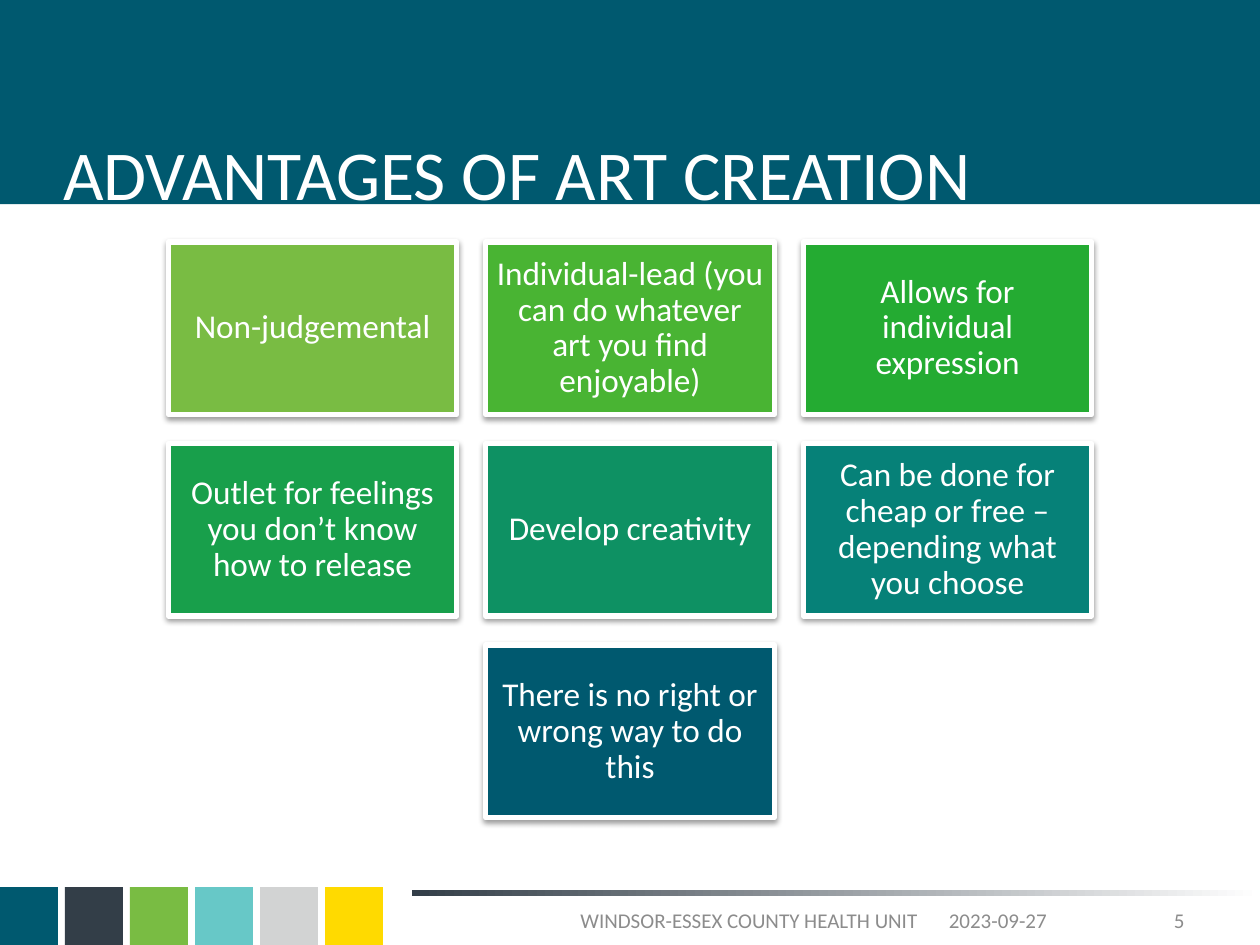
import dataclasses

import lxml.etree
import pptx
import pptx.dml.color
import pptx.enum.shapes
import pptx.enum.text
import pptx.oxml
import pptx.oxml.ns
import pptx.util

Inches = pptx.util.Inches
ALIGN = pptx.enum.text.PP_ALIGN
ANCHOR = pptx.enum.text.MSO_ANCHOR


@dataclasses.dataclass(frozen=True)
class Theme:
    font: str = "Calibri"
    title_size: int = 40
    card_size: int = 19
    footer_size: int = 12
    teal: str = "00596F"
    slate: str = "333E48"
    white: str = "FFFFFF"
    gray: str = "8C8C8C"
    swatches: tuple = ("00596F", "333E48", "79BC43", "67C8C7", "D2D3D3", "FFDA00")


SHADOW = (
    f'<a:effectLst {pptx.oxml.ns.nsdecls("a")}>'
    '<a:outerShdw blurRad="40000" dist="20000" dir="5400000" rotWithShape="0">'
    '<a:srgbClr val="000000"><a:alpha val="38000"/></a:srgbClr>'
    "</a:outerShdw></a:effectLst>"
)


def rgb(color):
    return pptx.dml.color.RGBColor.from_string(color)


class SlideBuilder:
    """Holds the theme and the current slide."""

    def __init__(self, slide, theme):
        self.slide = slide
        self.theme = theme

    def format_text(self, text_frame, size, color, align, anchor, inset=None):
        text_frame.word_wrap = True
        text_frame.auto_size = pptx.enum.text.MSO_AUTO_SIZE.NONE
        text_frame.vertical_anchor = anchor
        if inset is not None:
            text_frame.margin_left = text_frame.margin_right = Inches(inset)
            text_frame.margin_top = text_frame.margin_bottom = Inches(inset)
        for paragraph in text_frame.paragraphs:
            paragraph.alignment = align
            for run in paragraph.runs:
                run.font.name = self.theme.font
                run.font.size = pptx.util.Pt(size)
                run.font.color.rgb = rgb(color)

    def rectangle(self, left, top, width, height, color):
        shape = self.slide.shapes.add_shape(
            pptx.enum.shapes.MSO_SHAPE.RECTANGLE,
            Inches(left), Inches(top), Inches(width), Inches(height))
        shape.shadow.inherit = False
        shape.fill.solid()
        shape.fill.fore_color.rgb = rgb(color)
        shape.line.fill.background()
        return shape

    def fading_bar(self, left, top, width, height, start, end):
        fill = self.rectangle(left, top, width, height, start).fill
        fill.gradient()
        fill.gradient_angle = 0
        for stop, position, color in zip(fill.gradient_stops, (0, 1), (start, end)):
            stop.position = position
            stop.color.rgb = rgb(color)

    def title(self, text, left, top, width, height):
        title = self.slide.shapes.title
        title.left, title.top = Inches(left), Inches(top)
        title.width, title.height = Inches(width), Inches(height)
        title.text_frame.text = text
        self.format_text(title.text_frame, self.theme.title_size, self.theme.white,
                         ALIGN.LEFT, ANCHOR.BOTTOM, inset=0)
        # Bring the title in front of the banner
        title.element.getparent().append(title.element)

    def card(self, text, left, top, width, height, color):
        shape = self.rectangle(left, top, width, height, color)
        shape.line.color.rgb = rgb(self.theme.white)
        shape.line.width = pptx.util.Pt(3)
        properties = shape.element.spPr
        properties.remove(properties.find(pptx.oxml.ns.qn("a:effectLst")))
        properties.append(pptx.oxml.parse_xml(SHADOW))
        shape.text_frame.text = text
        self.format_text(shape.text_frame, self.theme.card_size, self.theme.white,
                         ALIGN.CENTER, ANCHOR.MIDDLE, inset=0.08)
        shape.text_frame.paragraphs[0].line_spacing = 0.9

    def footer(self, text, left, width, align):
        box = self.slide.shapes.add_textbox(
            Inches(left), Inches(7.1), Inches(width), Inches(0.4))
        box.text_frame.text = text
        self.format_text(box.text_frame, self.theme.footer_size, self.theme.gray,
                         align, ANCHOR.MIDDLE)


CARDS = (
    ("Non-judgemental", "79BC43"),
    ("Individual-lead (you can do whatever art you find enjoyable)", "49B433"),
    ("Allows for individual expression", "24AB32"),
    ("Outlet for feelings you don’t know how to release", "189F4B"),
    ("Develop creativity", "0E9163"),
    ("Can be done for cheap or free – depending what you choose", "068178"),
    ("There is no right or wrong way to do this", "00596F"),
)


def main():
    presentation = pptx.Presentation()
    presentation.slide_width = Inches(10)
    presentation.slide_height = Inches(7.5)
    theme = Theme()
    slide = presentation.slides.add_slide(presentation.slide_layouts[5])
    builder = SlideBuilder(slide, theme)

    # Banner and title
    builder.rectangle(0, 0, 10, 1.62, theme.teal)
    builder.title("ADVANTAGES OF ART CREATION", 0.5, 0.3, 9, 1.4)

    # Colour swatches and fading rule along the bottom
    swatch_size, swatch_pitch = 0.46, 2.58 / 5
    for index, color in enumerate(theme.swatches):
        builder.rectangle(index * swatch_pitch, 7.04, swatch_size, swatch_size, color)
    builder.fading_bar(3.27, 7.06, 6.73, 0.05, theme.slate, theme.white)

    # Footer
    builder.footer("2023-09-27", 7.25, 1.34, ALIGN.CENTER)
    builder.footer("WINDSOR-ESSEX COUNTY HEALTH UNIT", 3.27, 5.35, ALIGN.CENTER)
    builder.footer("5", 8.62, 0.88, ALIGN.RIGHT)

    # Cards in rows of three, each row centred on the slide
    columns, width, height, gap = 3, 2.29, 1.37, 0.23
    for start in range(0, len(CARDS), columns):
        row = CARDS[start:start + columns]
        row_left = (10 - len(row) * width - (len(row) - 1) * gap) / 2
        top = 1.92 + start // columns * (height + gap)
        for column, (text, color) in enumerate(row):
            builder.card(text, row_left + column * (width + gap), top,
                         width, height, color)

    presentation.save("out.pptx")


if __name__ == "__main__":
    main()
